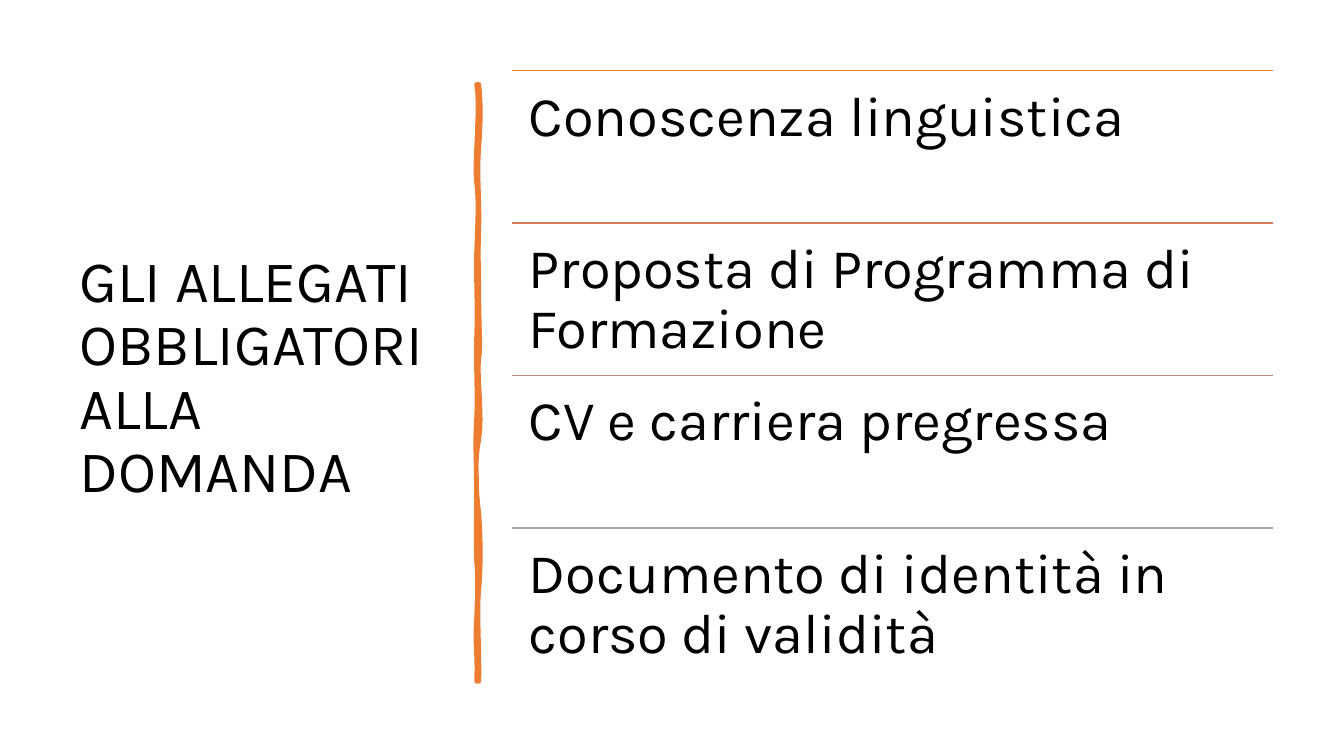
import pptx
import pptx.util
import pptx.dml.color
import pptx.enum.shapes
import pptx.enum.text
import pptx.oxml.ns
from lxml import etree

Cm, Pt = pptx.util.Cm, pptx.util.Pt
RGBColor = pptx.dml.color.RGBColor

ORANGE = RGBColor(0xED, 0x7D, 0x31)
BLACK = RGBColor(0, 0, 0)
FONT = "Karla"

TITLE = "GLI ALLEGATI OBBLIGATORI ALLA DOMANDA"
ATTACHMENTS = [
    ("Conoscenza linguistica", ORANGE),
    ("Proposta di Programma di Formazione", RGBColor(0xD1, 0x7B, 0x5C)),
    ("CV e carriera pregressa", RGBColor(0xB9, 0x8A, 0x82)),
    ("Documento di identità in corso di validità", RGBColor(0xA5, 0xA5, 0xA5)),
]
LIST_LEFT, LIST_TOP, LIST_WIDTH, ROW_HEIGHT = 12.9, 1.78, 19.18, 3.84

# Cubic curves of the hand-drawn bar, in cm: a start, then three points per curve
RIGHT_EDGE = [
    (12.07, 2.13), (12.12, 2.59), (12.12, 3.02), (12.07, 3.71),
    (12.01, 4.39), (12.09, 4.95), (12.07, 5.74),
    (12.04, 6.53), (12.07, 6.65), (12.07, 7.47),
    (12.07, 8.26), (12.12, 8.69), (12.07, 9.04),
    (12.01, 9.4), (12.17, 10.52), (12.07, 11.07),
    (11.96, 11.61), (11.99, 12.29), (12.07, 12.95),
    (12.12, 13.61), (12.12, 14.33), (12.07, 14.83),
    (12.01, 15.32), (12.09, 16.51), (12.07, 17.17),
]
LEFT_EDGE = [
    (12.01, 17.17), (12.04, 16.41), (11.96, 16.36), (12.01, 15.57),
    (12.04, 14.81), (12.04, 14.48), (12.01, 14.15),
    (11.99, 13.82), (12.01, 12.57), (12.01, 12.12),
    (12.01, 11.66), (11.96, 11.3), (12.01, 10.54),
    (12.04, 9.8), (11.99, 9.47), (12.01, 8.51),
    (12.04, 7.57), (11.99, 7.14), (12.01, 6.35),
    (12.04, 5.54), (12.07, 5.08), (12.01, 4.6),
    (11.94, 4.14), (12.12, 2.64), (12.01, 2.13),
]
STEPS = 8


def sample(edge):
    """Return points along a chain of cubic curves, in EMU."""
    points = [edge[0]]
    for i in range(0, len(edge) - 1, 3):
        for step in range(1, STEPS + 1):
            t = step / STEPS
            weights = ((1 - t) ** 3, 3 * t * (1 - t) ** 2, 3 * t * t * (1 - t), t ** 3)
            points.append(tuple(sum(w * c for w, c in zip(weights, axis))
                                for axis in zip(*edge[i:i + 4])))
    return [(Cm(x), Cm(y)) for x, y in points]


def add_text(s, text, box, size, anchor, inset=None):
    tb = s.shapes.add_textbox(*(Cm(v) for v in box))
    tf = tb.text_frame
    tf.word_wrap = True
    tf.vertical_anchor = anchor
    if inset is not None:
        tf.margin_left = tf.margin_right = tf.margin_top = tf.margin_bottom = Cm(inset)
    p = tf.paragraphs[0]
    p.text = text
    p.line_spacing = 0.9
    font = p.runs[0].font
    font.name, font.size = FONT, Pt(size)
    font.color.rgb = BLACK


def add_bar(s):
    points = sample(RIGHT_EDGE) + sample(LEFT_EDGE)
    builder = s.shapes.build_freeform(*points[0])
    builder.add_line_segments(points[1:], close=True)
    bar = builder.convert_to_shape()
    bar.shadow.inherit = False
    bar.fill.solid()
    bar.fill.fore_color.rgb = ORANGE
    bar.line.color.rgb = ORANGE
    bar.line.width = Pt(3.25)
    etree.SubElement(bar.line._get_or_add_ln(), pptx.oxml.ns.qn("a:round"))


def add_rule(s, y, color):
    rule = s.shapes.add_connector(pptx.enum.shapes.MSO_CONNECTOR.STRAIGHT,
                                  Cm(LIST_LEFT), Cm(y), Cm(LIST_LEFT + LIST_WIDTH), Cm(y))
    rule.line.color.rgb = color
    rule.line.width = Pt(1)
    etree.SubElement(rule._element.spPr, pptx.oxml.ns.qn("a:effectLst"))


def main():
    prs = pptx.Presentation()
    prs.slide_width, prs.slide_height = Cm(33.87), Cm(19.05)
    s = prs.slides.add_slide(prs.slide_layouts[6])
    anchors = pptx.enum.text.MSO_ANCHOR
    add_text(s, TITLE, (1.75, 1.78, 9.5, 15.52), 42, anchors.MIDDLE)
    add_bar(s)
    for i, (text, color) in enumerate(ATTACHMENTS):
        y = LIST_TOP + i * ROW_HEIGHT
        add_rule(s, y, color)
        add_text(s, text, (LIST_LEFT, y, LIST_WIDTH, ROW_HEIGHT), 40, anchors.TOP, 0.43)
    prs.save("out.pptx")


if __name__ == "__main__":
    main()
